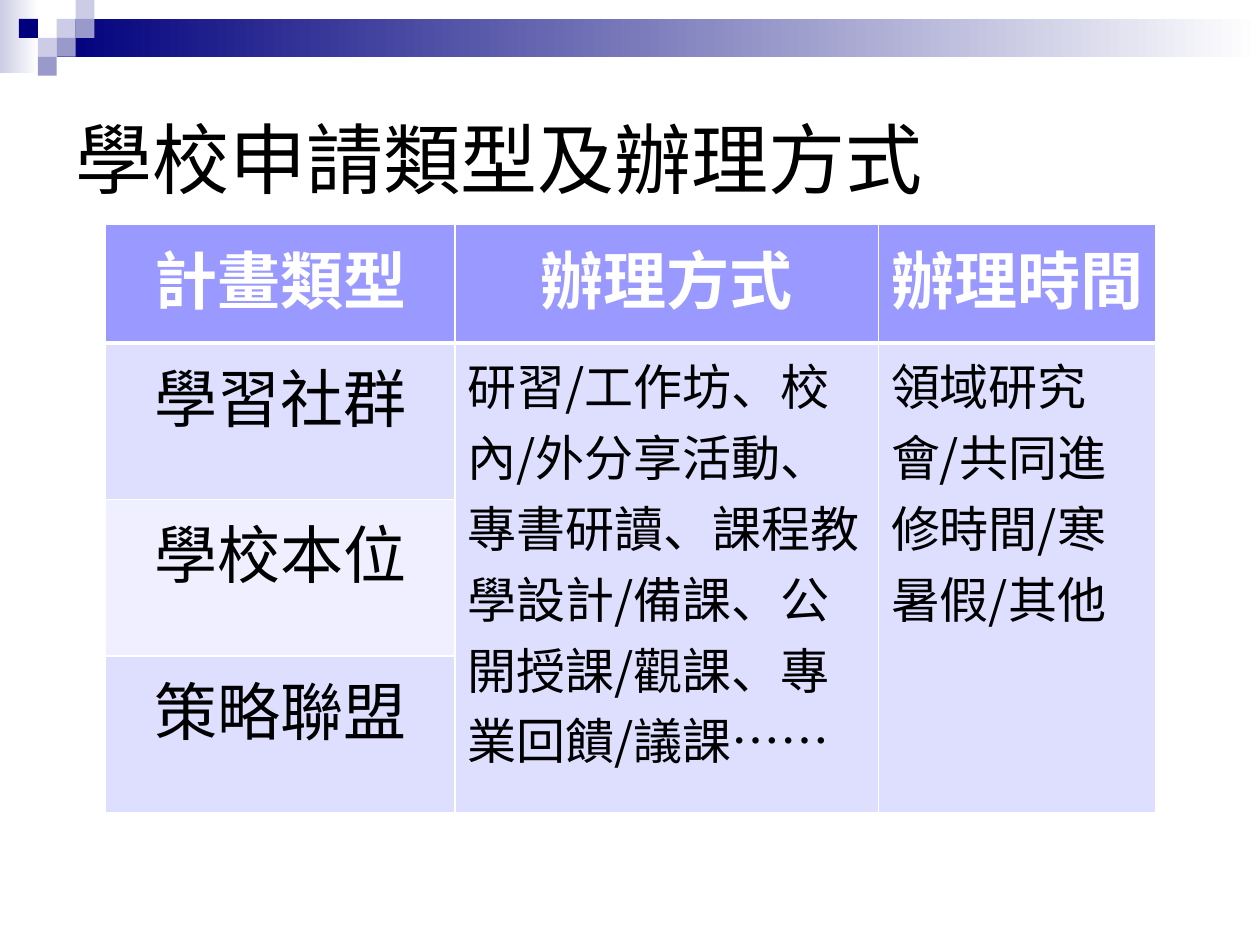
from lxml import etree
from pptx import Presentation
from pptx.dml.color import RGBColor
from pptx.enum.shapes import MSO_SHAPE
from pptx.enum.text import MSO_ANCHOR, PP_ALIGN
from pptx.oxml.ns import qn
from pptx.util import Pt

RECTANGLE = MSO_SHAPE.RECTANGLE
MIDDLE = MSO_ANCHOR.MIDDLE
LEFT = PP_ALIGN.LEFT
CENTER = PP_ALIGN.CENTER

COLORS = {
    "navy": "00007D",
    "pale": "CCCCE6",
    "violet": "9999CC",
    "header": "9999FF",
    "band": "DEDEFF",
    "light_band": "EFEFFF",
    "white": "FFFFFF",
    "black": "000000",
}
TITLE_FONT = "Noto Sans CJK JP"
TABLE_FONT = "Noto Sans CJK SC"
SQUARE = 10.8


class SlideBuilder:
    def __init__(self, presentation):
        self.slide = presentation.slides.add_slide(presentation.slide_layouts[5])

    def color(self, name):
        return RGBColor.from_string(COLORS[name])

    def rectangle(self, left, top, width, height, color, end_color=None):
        shape = self.slide.shapes.add_shape(
            RECTANGLE, Pt(left), Pt(top), Pt(width), Pt(height))
        shape.shadow.inherit = False
        shape.line.fill.background()
        if end_color:
            shape.fill.gradient()
            shape.fill.gradient_angle = 0
            for stop, name in zip(shape.fill.gradient_stops, (color, end_color)):
                stop.color.rgb = self.color(name)
        else:
            shape.fill.solid()
            shape.fill.fore_color.rgb = self.color(color)

    def text(self, frame, content, size, font, color="black", align=LEFT, bold=False):
        paragraph = frame.paragraphs[0]
        paragraph.alignment = align
        run = paragraph.add_run()
        run.text = content
        run.font.size = Pt(size)
        run.font.bold = bold
        run.font.name = font
        run.font.color.rgb = self.color(color)
        east_asian = etree.Element(qn("a:ea"), typeface=font)
        run.font._element.find(qn("a:latin")).addnext(east_asian)

    def title(self, content, left, top, width, height):
        title = self.slide.shapes.title
        title.left, title.top = Pt(left), Pt(top)
        title.width, title.height = Pt(width), Pt(height)
        title.text_frame.vertical_anchor = MIDDLE
        self.text(title.text_frame, content, 44, TITLE_FONT)

    def table(self, left, top, widths, heights):
        table = self.slide.shapes.add_table(
            len(heights), len(widths), Pt(left), Pt(top),
            Pt(sum(widths)), Pt(sum(heights))).table
        for column, width in zip(table.columns, widths):
            column.width = Pt(width)
        for row, height in zip(table.rows, heights):
            row.height = Pt(height)
        return table

    def cell(self, cell, fill, top_border=1, bottom_border=1):
        cell.fill.solid()
        cell.fill.fore_color.rgb = self.color(fill)
        properties = cell._tc.get_or_add_tcPr()
        borders = {"lnL": 1, "lnR": 1, "lnT": top_border, "lnB": bottom_border}
        for position, (side, width) in enumerate(borders.items()):
            line = etree.Element(qn(f"a:{side}"), w=str(Pt(width)))
            solid = etree.SubElement(line, qn("a:solidFill"))
            etree.SubElement(solid, qn("a:srgbClr"), val=COLORS["white"])
            properties.insert(position, line)


def main():
    presentation = Presentation()
    presentation.slide_width, presentation.slide_height = Pt(720), Pt(540)
    builder = SlideBuilder(presentation)

    builder.rectangle(0, 0, 22, 42, "pale", "white")
    builder.rectangle(32.4, SQUARE, 687.6, 21.6, "navy", "white")
    squares = [(3, 1, "pale"), (4, 0, "pale"), (4, 1, "violet"), (2, 2, "pale"),
               (1, 1, "navy"), (3, 2, "violet"), (2, 3, "violet")]
    for column, row, color in squares:
        builder.rectangle(column * SQUARE, row * SQUARE, SQUARE, SQUARE, color)

    builder.title("學校申請類型及辦理方式", 36, 36, 648, 108)

    table = builder.table(60, 128.4, [200, 242, 158.6], [67.6] + [89.5] * 3)
    row_fills = ["header", "band", "light_band", "band"]
    for row, fill in enumerate(row_fills):
        for column in range(3):
            cell_fill = fill if row == 0 or column == 0 else "band"
            builder.cell(table.cell(row, column), cell_fill,
                         3 if row == 1 else 1, 3 if row == 0 else 1)

    headers = [("計畫類型", CENTER), ("辦理方式", CENTER), ("辦理時間", LEFT)]
    for column, (header, align) in enumerate(headers):
        builder.text(table.cell(0, column).text_frame, header, 36, TABLE_FONT,
                     "white", align, True)
    for row, plan in enumerate(["學習社群", "學校本位", "策略聯盟"], 1):
        builder.text(table.cell(row, 0).text_frame, plan, 36, TABLE_FONT, align=CENTER)
    details = [
        "研習/工作坊、校內/外分享活動、專書研讀、課程教學設計/備課、公開授課/觀課、專業回饋/議課……",
        "領域研究會/共同進修時間/寒暑假/其他",
    ]
    for column, detail in enumerate(details, 1):
        table.cell(1, column).merge(table.cell(3, column))
        builder.text(table.cell(1, column).text_frame, detail, 28, TABLE_FONT)

    presentation.save("out.pptx")


if __name__ == "__main__":
    main()
